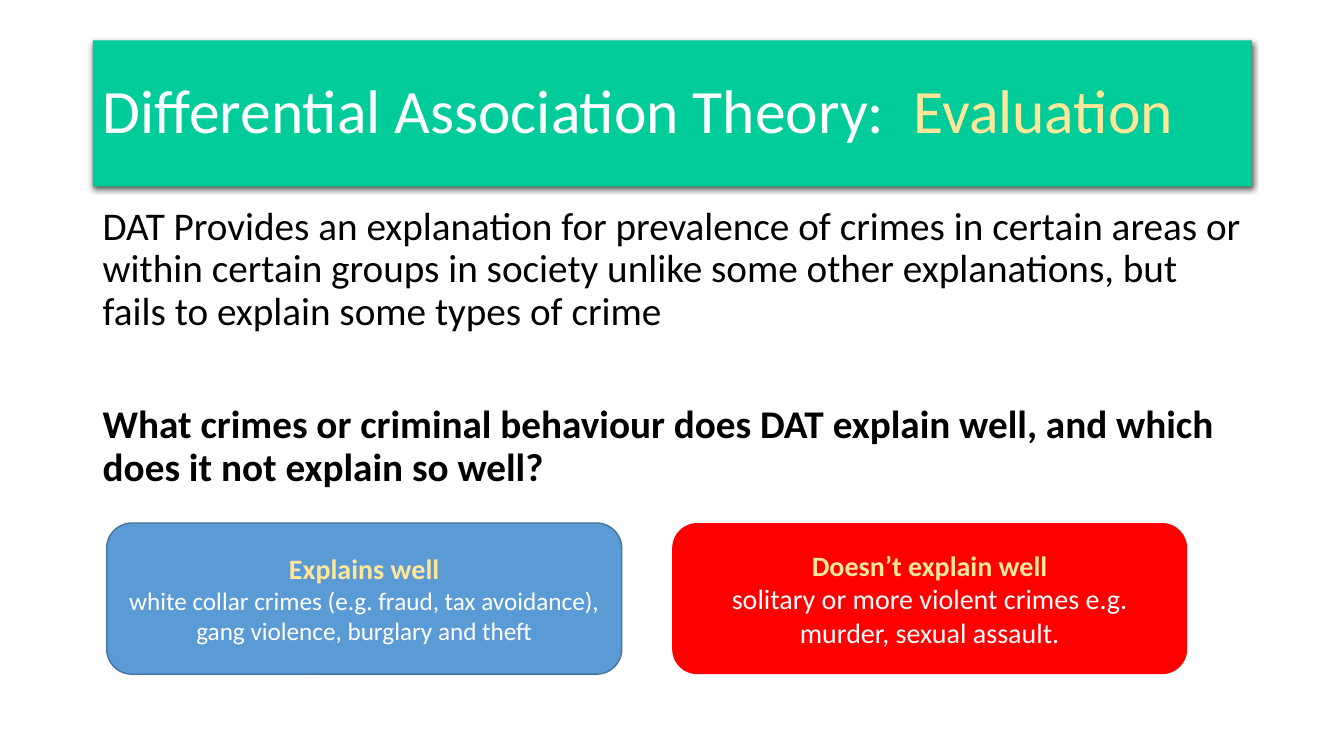
from lxml import etree
from pptx import Presentation
from pptx.dml.color import RGBColor
from pptx.enum.shapes import MSO_SHAPE
from pptx.enum.text import MSO_ANCHOR, PP_ALIGN
from pptx.oxml.ns import qn
from pptx.util import Cm, Pt

RECT = MSO_SHAPE.RECTANGLE
ROUNDED = MSO_SHAPE.ROUNDED_RECTANGLE
MIDDLE = MSO_ANCHOR.MIDDLE
LEFT, CENTER = PP_ALIGN.LEFT, PP_ALIGN.CENTER

FONT = "Calibri"
WHITE, BLACK, CREAM = "FFFFFF", "000000", "FFE699"
GREEN, BLUE, DARK_BLUE, RED = "00CC99", "5B9BD5", "43739E", "FF0000"
MARGIN, CONTENT_WIDTH = 2.34, 29.21


def color(value):
    return RGBColor.from_string(value)


def add_run(p, text, size, fill, bold=False):
    r = p.add_run()
    r.text = text
    r.font.name = FONT
    r.font.size = Pt(size)
    r.font.bold = bold
    r.font.color.rgb = color(fill)


def add_box(s, kind, left, top, width, height, fill, line=None):
    sp = s.shapes.add_shape(kind, Cm(left), Cm(top), Cm(width), Cm(height))
    sp.shadow.inherit = False
    sp.fill.solid()
    sp.fill.fore_color.rgb = color(fill)
    if line:
        sp.line.color.rgb = color(line)
        sp.line.width = Pt(1)
    else:
        sp.line.fill.background()
    sp.text_frame.word_wrap = True
    sp.text_frame.vertical_anchor = MIDDLE
    return sp


def add_shadow(sp):
    effects = sp.fill._xPr.find(qn("a:effectLst"))
    shadow = etree.SubElement(effects, qn("a:outerShdw"), blurRad=str(Pt(4.5)),
                              dist=str(Pt(1.5)), dir="5400000",
                              algn="ctr", rotWithShape="0")
    black = etree.SubElement(shadow, qn("a:srgbClr"), val=BLACK)
    etree.SubElement(black, qn("a:alpha"), val="63000")


def add_title(s, text, highlight):
    sp = add_box(s, RECT, MARGIN, 1.02, CONTENT_WIDTH, 3.68, GREEN)
    add_shadow(sp)
    p = sp.text_frame.paragraphs[0]
    p.alignment = LEFT
    p.line_spacing = 0.9
    add_run(p, text, 44, WHITE)
    add_run(p, highlight, 44, CREAM)


def add_body(s, statement, question):
    sp = s.shapes.add_textbox(Cm(MARGIN), Cm(5.08), Cm(CONTENT_WIDTH), Cm(7.8))
    tf = sp.text_frame
    tf.word_wrap = True
    paragraphs = [tf.paragraphs[0], tf.add_paragraph()]
    for p, text, gap, bold in zip(paragraphs, (statement, question), (10, 51), (False, True)):
        p.line_spacing = 0.9
        p.space_before = Pt(gap)
        add_run(p, text, 28, BLACK, bold)


def add_card(s, left, heading, detail, detail_size, fill, line=None):
    sp = add_box(s, ROUNDED, left, 13.18, 12.98, 3.81, fill, line)
    tf = sp.text_frame
    p = tf.paragraphs[0]
    p.alignment = CENTER
    add_run(p, heading, 20, CREAM, True)
    p = tf.add_paragraph()
    p.alignment = CENTER
    add_run(p, detail, detail_size, WHITE)


def main():
    prs = Presentation()
    prs.slide_width, prs.slide_height = Cm(33.87), Cm(19.05)
    s = prs.slides.add_slide(prs.slide_layouts[6])
    add_body(
        s,
        "DAT Provides an explanation for prevalence of crimes in certain areas or "
        "within certain groups in society unlike some other explanations, but "
        "fails to explain some types of crime",
        "What crimes or criminal behaviour does DAT explain well, and which "
        "does it not explain so well?",
    )
    add_title(s, "Differential Association Theory:  ", "Evaluation")
    add_card(s, 2.69, "Explains well",
             "white collar crimes (e.g. fraud, tax avoidance), "
             "gang violence, burglary and theft", 18, BLUE, DARK_BLUE)
    add_card(s, 16.94, "Doesn’t explain well",
             "solitary or more violent crimes e.g. murder, sexual assault.", 20, RED)
    prs.save("out.pptx")


if __name__ == "__main__":
    main()
